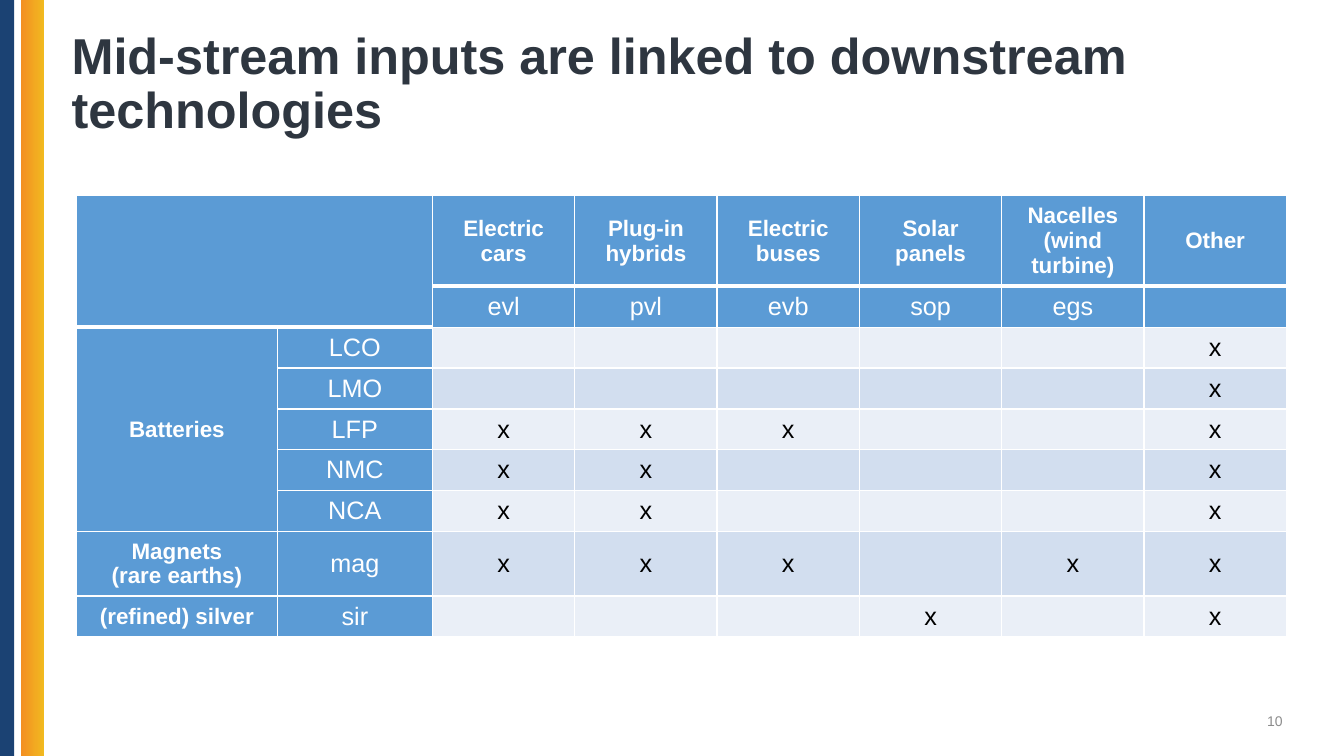
from pptx import Presentation
from pptx.dml.color import RGBColor
from pptx.enum.shapes import MSO_SHAPE as Kind
from pptx.enum.text import MSO_ANCHOR as Anchor, MSO_AUTO_SIZE as Fit, PP_ALIGN as Align
from pptx.oxml import parse_xml
from pptx.oxml.ns import nsdecls
from pptx.util import Inches, Pt

TITLE = "Mid-stream inputs are linked to downstream technologies"
PAGE = "10"
TECHS = [
    ("Electric cars", "evl"),
    ("Plug-in hybrids", "pvl"),
    ("Electric buses", "evb"),
    ("Solar panels", "sop"),
    ("Nacelles (wind turbine)", "egs"),
    ("Other", ""),
]
INPUTS = [
    (["Batteries"], "LCO", "Other"),
    ([], "LMO", "Other"),
    ([], "LFP", "evl pvl evb Other"),
    ([], "NMC", "evl pvl Other"),
    ([], "NCA", "evl pvl Other"),
    (["Magnets", "(rare earths)"], "mag", "evl pvl evb egs Other"),
    (["(refined) silver"], "sir", "sop Other"),
]
SPANS = [(0, 0, 1, 1), (2, 0, 6, 0)]
WHITE, BLACK, BLUE = "FFFFFF", "000000", "5B9BD5"
BANDS = ["EAEFF7", "D2DEEF"]
NAVY, DARK, GREY = "1B4273", "2E3640", "8C8C8C"
GRAD = ["F38F22", "F1BA20"]
LEFT, TOP, WIDE, HIGH = 0.76, 1.94, 12, 4.38
SIDE = [1.99, 1.54]
HEAD, MAG = 0.9, 0.64


def color(code):
    return RGBColor.from_string(code)


def write(frame, lines, size, code, bold=False, align=Align.CENTER):
    for i, line in enumerate(lines):
        para = frame.paragraphs[0] if i == 0 else frame.add_paragraph()
        para.alignment = align
        run = para.add_run()
        run.text = line
        font = run.font
        font.name, font.size, font.bold = "Arial", Pt(size), bold
        font.color.rgb = color(code)


def add_bar(slide, left, width):
    bar = slide.shapes.add_shape(Kind.RECTANGLE, Inches(left), 0, Inches(width), Inches(7.5))
    bar.shadow.inherit = False
    bar.line.fill.background()
    return bar.fill


def thick(row, col):
    return row == 0 or (row == 1 and col < 2)


def edge(cell, row, col):
    low = 3 if thick(row, col) else 1
    high = 3 if row and thick(row - 1, col) else 1
    props = cell._tc.get_or_add_tcPr()
    for side, width in (("L", 1), ("R", 1), ("T", high), ("B", low)):
        props.append(parse_xml(
            f'<a:ln{side} {nsdecls("a")} w="{Pt(width)}"><a:solidFill>'
            f'<a:srgbClr val="{WHITE}"/></a:solidFill></a:ln{side}>'))


def build_grid():
    grid = [[[], []] + [[name] for name, _ in TECHS],
            [[], []] + [[code] if code else [] for _, code in TECHS]]
    for group, code, uses in INPUTS:
        marks = [["x"] if (key or name) in uses.split() else [] for name, key in TECHS]
        grid.append([group, [code]] + marks)
    return grid


def add_grid(slide):
    grid = build_grid()
    rows, cols = len(grid), len(grid[0])
    table = slide.shapes.add_table(
        rows, cols, Inches(LEFT), Inches(TOP), Inches(WIDE), Inches(HIGH)).table
    table.horz_banding = False
    step = (WIDE - sum(SIDE)) / len(TECHS)
    for col, width in zip(table.columns, SIDE + [step] * len(TECHS)):
        col.width = Inches(width)
    plain = (HIGH - HEAD - MAG) / (rows - 2)
    tall = {0: HEAD, rows - 2: MAG}
    for i, row in enumerate(table.rows):
        row.height = Inches(tall.get(i, plain))
    for r, line in enumerate(grid):
        for c, text in enumerate(line):
            cell = table.cell(r, c)
            label = r < 2 or c < 2
            bold = r == 0 or c == 0
            edge(cell, r, c)
            cell.fill.solid()
            cell.fill.fore_color.rgb = color(BLUE if label else BANDS[r % 2])
            cell.vertical_anchor = Anchor.MIDDLE
            write(cell.text_frame, text, 16 if bold else 18, WHITE if label else BLACK, bold)
    for r, c, last, end in SPANS:
        table.cell(r, c).merge(table.cell(last, end))


def main():
    deck = Presentation()
    deck.slide_width, deck.slide_height = Inches(13.33), Inches(7.5)
    slide = deck.slides.add_slide(deck.slide_layouts[5])

    navy = add_bar(slide, 0, 0.14)
    navy.solid()
    navy.fore_color.rgb = color(NAVY)
    gold = add_bar(slide, 0.21, 0.23)
    gold.gradient()
    gold.gradient_angle = 0
    for stop, code in zip(gold.gradient_stops, GRAD):
        stop.color.rgb = color(code)

    add_grid(slide)

    title = slide.shapes.title
    title.left, title.top = Inches(0.61), Inches(0.12)
    title.width, title.height = Inches(12.52), Inches(1.45)
    frame = title.text_frame
    frame.auto_size = Fit.NONE
    frame.vertical_anchor = Anchor.MIDDLE
    write(frame, [TITLE], 36, DARK, True, Align.LEFT)
    frame.paragraphs[0].line_spacing = 0.9

    page = slide.shapes.add_textbox(Inches(9.82), Inches(6.95), Inches(3), Inches(0.4))
    page.text_frame.word_wrap = True
    page.text_frame.vertical_anchor = Anchor.MIDDLE
    write(page.text_frame, [PAGE], 10, GREY, align=Align.RIGHT)

    deck.save("out.pptx")


if __name__ == "__main__":
    main()
